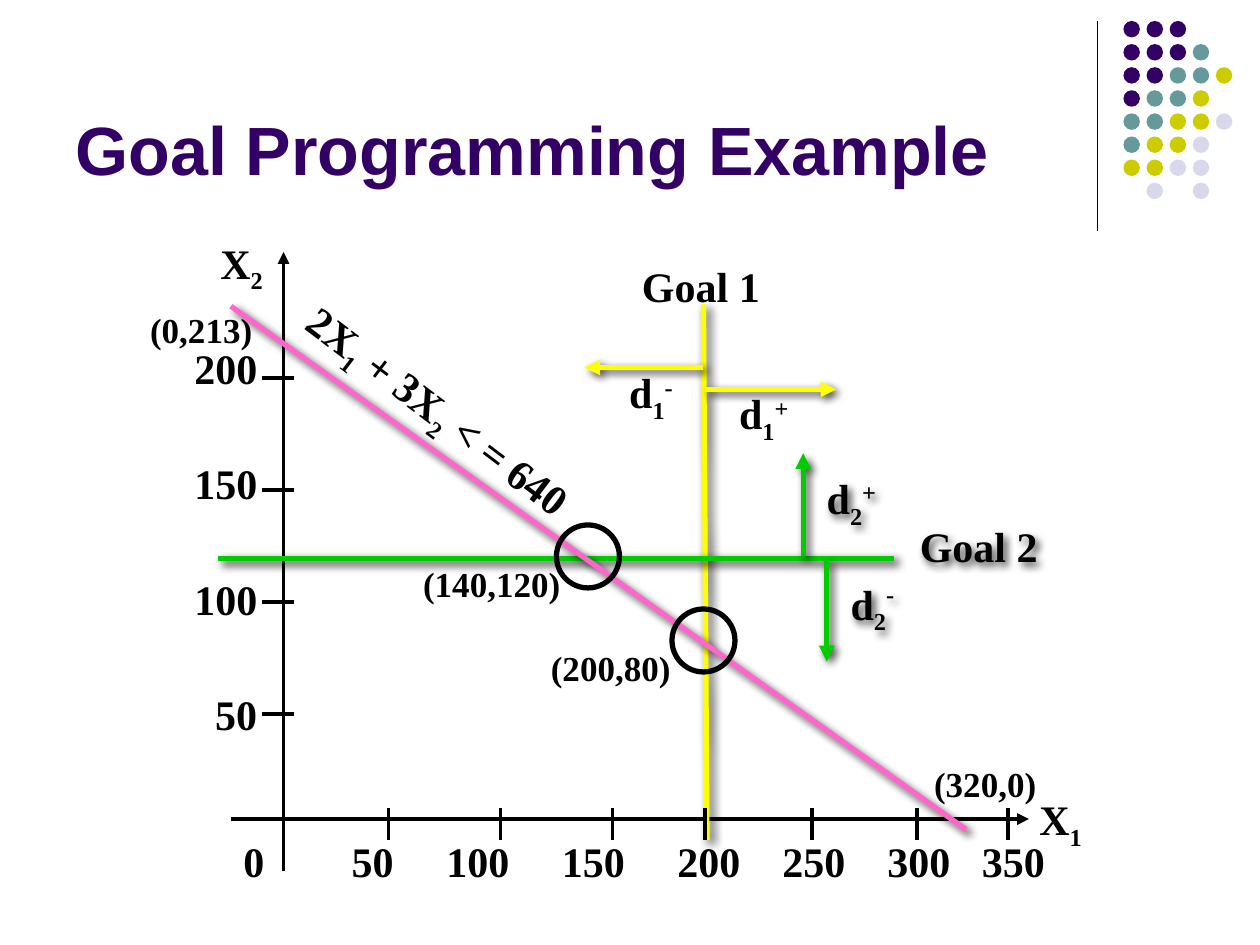
from lxml import etree
from pptx import Presentation
from pptx.dml.color import RGBColor
from pptx.enum import shapes, text
from pptx.oxml import ns
from pptx.util import Pt

BLACK = RGBColor(0x00, 0x00, 0x00)
PURPLE = RGBColor(0x33, 0x00, 0x66)
TEAL = RGBColor(0x66, 0x99, 0x99)
OLIVE = RGBColor(0xCC, 0xCC, 0x00)
LAVENDER = RGBColor(0xD8, 0xD8, 0xEC)
YELLOW = RGBColor(0xFF, 0xFF, 0x00)
GREEN = RGBColor(0x00, 0xCC, 0x00)
PINK = RGBColor(0xFF, 0x66, 0xCC)

SUB, SUPER = -25000, 30000
LABEL_WIDTH = {1: 24, 2: 42, 3: 54}  # by number of digits


class Chart:
    """Draws the elements of the graph; all lengths are points."""
    font = "Times New Roman"

    def __init__(self, page):
        self.page = page

    def effects(self, shape, shadow):
        effects = etree.SubElement(shape._element.spPr, ns.qn("a:effectLst"))
        if shadow:
            outer = etree.SubElement(effects, ns.qn("a:outerShdw"), blurRad=str(Pt(5)),
                                     dist=str(Pt(3)), dir="2700000", rotWithShape="0")
            color = etree.SubElement(outer, ns.qn("a:srgbClr"), val=str(BLACK))
            etree.SubElement(color, ns.qn("a:alpha"), val="75000")

    def line(self, x1, y1, x2, y2, color=BLACK, width=2.25, arrow=False, shadow=False):
        line = self.page.shapes.add_connector(
            shapes.MSO_CONNECTOR.STRAIGHT, Pt(x1), Pt(y1), Pt(x2), Pt(y2))
        line.line.color.rgb = color
        line.line.width = Pt(width)
        if arrow:
            etree.SubElement(line.line._get_or_add_ln(), ns.qn("a:tailEnd"), type="triangle")
        self.effects(line, shadow)

    def goal_line(self, x1, y1, x2, y2, color, arrow=False):
        self.line(x1, y1, x2, y2, color, 3, arrow, shadow=True)

    def circle(self, left, top, size, fill=None):
        circle = self.page.shapes.add_shape(
            shapes.MSO_SHAPE.OVAL, Pt(left), Pt(top), Pt(size), Pt(size))
        circle.shadow.inherit = False
        if fill is None:
            circle.fill.background()
            circle.line.color.rgb = BLACK
            circle.line.width = Pt(3)
        else:
            circle.fill.solid()
            circle.fill.fore_color.rgb = fill
            circle.line.fill.background()

    def label(self, left, top, width, *spans, height=36, size=24, color=BLACK, font=None,
              align=text.PP_ALIGN.CENTER, anchor=text.MSO_ANCHOR.TOP, turn=0, shadow=False):
        """Each span is a string, or a (string, baseline) pair."""
        box = self.page.shapes.add_textbox(Pt(left), Pt(top), Pt(width), Pt(height))
        box.rotation = turn
        frame = box.text_frame
        frame.word_wrap = True
        frame.vertical_anchor = anchor
        para = frame.paragraphs[0]
        para.alignment = align
        para.font.name = font or self.font
        para.font.size = Pt(size)
        para.font.bold = True
        para.font.color.rgb = color
        for item in spans:
            words, baseline = (item, 0) if isinstance(item, str) else item
            span = para.add_run()
            span.text = words
            if baseline:
                span._r.get_or_add_rPr().set("baseline", str(baseline))
        if shadow:
            self.effects(box, shadow)

    def point(self, left, top, words):
        self.label(left, top, 94, words, height=31, size=20)


def main():
    deck = Presentation()
    deck.slide_width, deck.slide_height = Pt(720), Pt(540)
    chart = Chart(deck.slides.add_slide(deck.slide_layouts[6]))

    # Corner decoration
    chart.line(627, 12, 627, 132, width=0.75)
    dot_colors = {"P": PURPLE, "T": TEAL, "O": OLIVE, "L": LAVENDER}
    dot_rows = ["PPP", "PPPT", "PPTTO", "PTTO", "TTOOL", "TOOL", "OOLL", " L L"]
    for row, codes in enumerate(dot_rows):
        for column, code in enumerate(codes):
            if code in dot_colors:
                chart.circle(642 + 13.2 * column, 12 + 13.2 * row, 9.4, dot_colors[code])

    # Title
    chart.label(36, 9.4, 594, "Goal Programming Example", height=102, size=39, color=PURPLE,
                font="Arial", align=text.PP_ALIGN.LEFT, anchor=text.MSO_ANCHOR.BOTTOM)

    # Axes
    chart.line(132, 468, 588, 468, arrow=True)
    chart.line(162, 498, 162, 144, arrow=True)
    chart.label(582, 450, 48, "X", ("1", SUB))
    chart.label(114, 132, 48, "X", ("2", SUB))

    # Horizontal scale: label centres
    for step, center in enumerate([144, 213, 273, 339, 405, 465, 525, 579]):
        value = str(50 * step)
        width = LABEL_WIDTH[len(value)]
        chart.label(center - width / 2, 474, width, value)

    # Vertical scale: labels share a right edge
    for step in range(4):
        value = str(200 - 50 * step)
        width = LABEL_WIDTH[len(value)]
        chart.line(150, 216 + 64 * step, 168, 216 + 64 * step)
        chart.label(156 - width, 192 + 66 * step, width, value)

    # Goal 1 with its deviations
    chart.goal_line(402, 174, 404, 480, YELLOW)
    chart.label(358, 145.5, 85, "Goal 1")
    chart.goal_line(402, 210, 334, 210, YELLOW, arrow=True)
    chart.goal_line(403, 222.5, 478, 222.5, YELLOW, arrow=True)
    chart.label(348, 206, 48, "d", ("1", SUB), ("-", SUPER))
    chart.label(412.5, 218, 48, "d", ("1", SUB), ("+", SUPER))

    # Goal 2 with its deviations
    chart.goal_line(124.5, 319, 511, 319, GREEN)
    chart.label(516, 294, 86.5, "Goal 2", shadow=True)
    chart.goal_line(459, 318, 459, 259, GREEN, arrow=True)
    chart.goal_line(472.5, 320, 472.5, 378, GREEN, arrow=True)
    chart.label(463, 266.5, 47, "d", ("2", SUB), ("+", SUPER), shadow=True)
    chart.label(475, 327, 47, "d", ("2", SUB), ("-", 40000), shadow=True)

    # Constraint
    chart.goal_line(132, 175, 552, 474, PINK)
    chart.label(153.5, 217.5, 198, "2X", ("1", SUB), " + 3X", ("2", SUB), " < = 640",
                align=text.PP_ALIGN.LEFT, turn=37.1)

    # Horizontal ticks, in front of the goal lines
    for x in [222, 286, 350, 403, 464, 524, 576]:
        chart.line(x, 462, x, 480)

    # Corner points
    chart.point(234, 318, "(140,120)")
    chart.point(302, 366, "(200,80)")
    chart.point(68, 173, "(0,213)")
    chart.point(516, 432, "(320,0)")
    chart.circle(384, 348, 36)
    chart.circle(318, 300, 36)

    deck.save("out.pptx")


if __name__ == "__main__":
    main()
